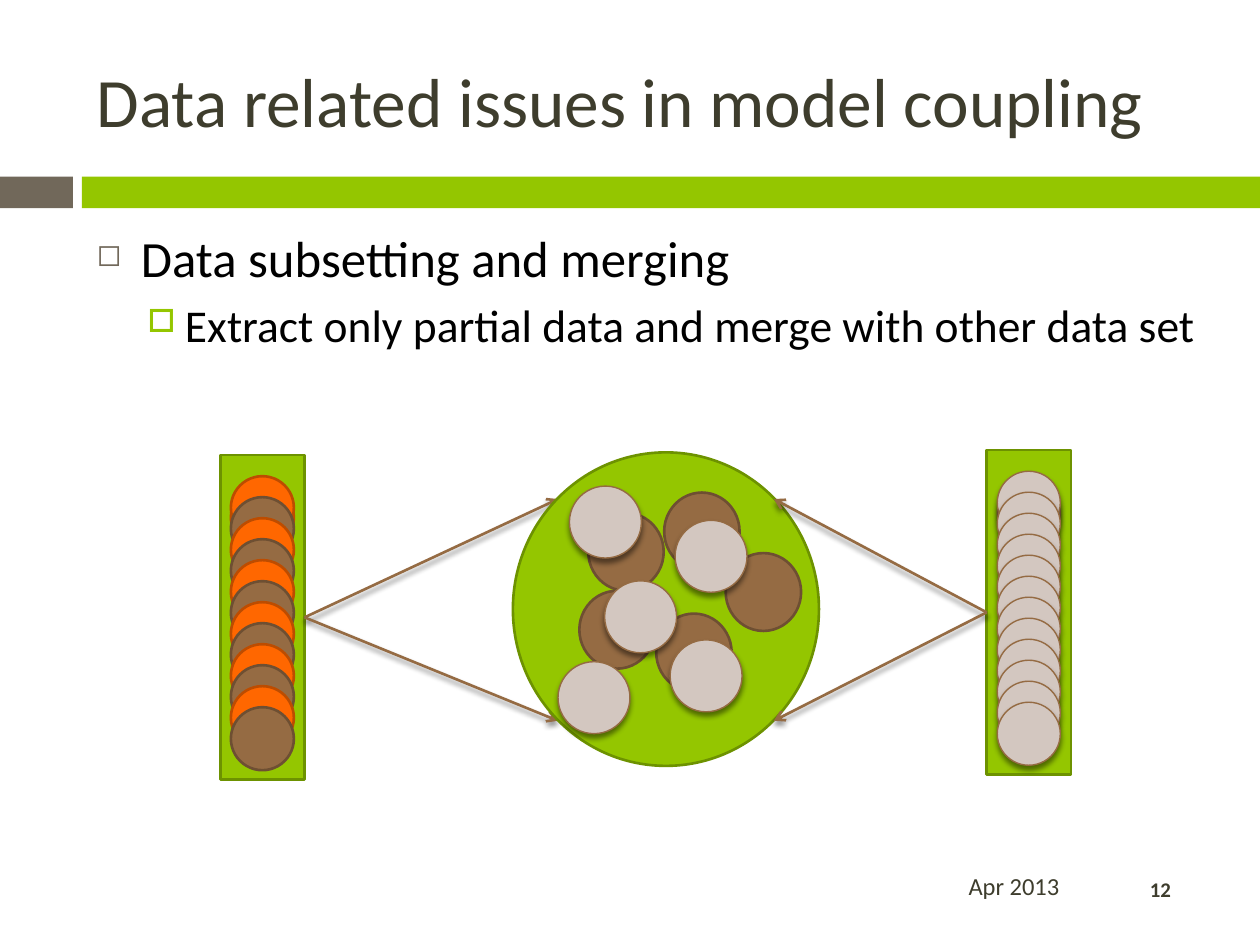
from dataclasses import dataclass
from typing import Optional

from lxml.etree import SubElement
from pptx import Presentation
from pptx.dml.color import RGBColor
from pptx.enum.shapes import MSO_CONNECTOR as Conn, MSO_SHAPE as Shape
from pptx.enum.text import MSO_ANCHOR as Anchor, PP_ALIGN as Align
from pptx.oxml.ns import qn
from pptx.util import Cm, Pt


@dataclass(frozen=True)
class Theme:
    font: str = "Calibri"
    heading: str = "3E3D2D"
    body: str = "000000"
    taupe: str = "71685A"
    green: str = "94C600"
    green_edge: str = "6D9200"
    orange: str = "FF6700"
    orange_edge: str = "BD4C00"
    brown: str = "956B43"
    brown_edge: str = "6E4F32"
    pale: str = "D3C7C0"
    shadow: str = "000000"
    title_pt: float = 39.6
    level1_pt: float = 29
    level2_pt: float = 26
    date_pt: float = 14
    number_pt: float = 11.9
    line_pt: float = 1.5
    thin_pt: float = 0.79


@dataclass(frozen=True)
class Style:
    fill: str
    edge: Optional[str] = None
    width: float = 1.5
    shadow: bool = False


@dataclass(frozen=True)
class Bullet:
    char: str
    color: str
    percent: int
    left: float
    hang: float


@dataclass(frozen=True)
class Column:
    x: float
    y: float
    styles: tuple


T = Theme()
GREEN = Style(T.green, T.green_edge, T.line_pt)
ORANGE = Style(T.orange, T.orange_edge, T.line_pt)
BROWN = Style(T.brown, T.brown_edge, T.line_pt)
PALE = Style(T.pale, T.brown, T.thin_pt, shadow=True)

COLUMN_W, COLUMN_H = 1.7, 6.55
DISC, DISC_COUNT = 1.27, 12
SOURCE = Column(4.44, 9.17, (ORANGE, BROWN))
OTHER = Column(19.89, 9.07, (PALE, PALE))
BROWN_SPOTS = ((13.23, 12.37), (14.63, 11.15), (13.39, 9.93), (11.86, 10.34), (11.68, 11.91))
PALE_SPOTS = ((13.61, 10.49), (11.48, 9.8), (13.51, 12.9), (12.19, 11.71), (11.25, 13.34))
ARROW_ENDS_Y = (10.06, 14.53)


def add_effects(spPr, shadow: bool) -> None:
    """Give a shape or connector a soft shadow below it, or none."""
    effects = SubElement(spPr, qn("a:effectLst"))
    if shadow:
        outer = SubElement(effects, qn("a:outerShdw"), blurRad=str(Pt(3)), dist=str(Pt(2.4)),
                           dir="5400000", rotWithShape="0")
        color = SubElement(outer, qn("a:srgbClr"), val=T.shadow)
        SubElement(color, qn("a:alpha"), val="45000")


def add_shape(shapes, kind: Shape, x: float, y: float, w: float, h: float, style: Style) -> None:
    """Draw a filled preset shape, measured in centimetres."""
    sp = shapes.add_shape(kind, Cm(x), Cm(y), Cm(w), Cm(h))
    sp.fill.solid()
    sp.fill.fore_color.rgb = RGBColor.from_string(style.fill)
    if style.edge:
        sp.line.color.rgb = RGBColor.from_string(style.edge)
        sp.line.width = Pt(style.width)
    else:
        sp.line.fill.background()
    add_effects(sp._element.spPr, style.shadow)


def add_arrow(shapes, x1: float, y1: float, x2: float, y2: float) -> None:
    """Draw a shadowed line with an open arrowhead at its end."""
    cxn = shapes.add_connector(Conn.STRAIGHT, Cm(x1), Cm(y1), Cm(x2), Cm(y2))
    cxn.line.color.rgb = RGBColor.from_string(T.brown)
    cxn.line.width = Pt(T.line_pt)
    SubElement(cxn.line._get_or_add_ln(), qn("a:tailEnd"), type="arrow")
    add_effects(cxn._element.spPr, shadow=True)


def add_frame(shapes, x: float, y: float, w: float, h: float, anchor: Anchor = Anchor.MIDDLE):
    """Add a wrapping text box and return its text frame."""
    tf = shapes.add_textbox(Cm(x), Cm(y), Cm(w), Cm(h)).text_frame
    tf.word_wrap = True
    tf.vertical_anchor = anchor
    return tf


def write(tf, text: str, *, size: float, color: str = T.heading, bold: bool = False,
          align: Align = Align.LEFT, before: float = 0, level: int = 0,
          bullet: Optional[Bullet] = None) -> None:
    """Write one formatted paragraph, using the empty first one if there is one."""
    p = tf.paragraphs[0] if not tf.text else tf.add_paragraph()
    p.alignment, p.level, p.space_before = align, level, Pt(before)
    r = p.add_run()
    r.text = text
    r.font.name, r.font.size, r.font.bold = T.font, Pt(size), bold
    r.font.color.rgb = RGBColor.from_string(color)
    if bullet:
        pPr = p._p.get_or_add_pPr()
        pPr.set("marL", str(Cm(bullet.left)))
        pPr.set("indent", str(-Cm(bullet.hang)))
        SubElement(SubElement(pPr, qn("a:buClr")), qn("a:srgbClr"), val=bullet.color)
        SubElement(pPr, qn("a:buSzPct"), val=str(bullet.percent * 1000))
        SubElement(pPr, qn("a:buChar"), char=bullet.char)


def add_column(shapes, column: Column) -> None:
    """Draw a data column: a bar holding a stack of overlapping discs."""
    group = shapes.add_group_shape().shapes
    add_shape(group, Shape.RECTANGLE, column.x, column.y, COLUMN_W, COLUMN_H, GREEN)
    x = column.x + (COLUMN_W - DISC) / 2
    add_shape(group, Shape.OVAL, x, column.y + 0.63, DISC, DISC, column.styles[0])
    for i in range(DISC_COUNT):
        y = column.y + 0.43 + i * DISC / 3
        add_shape(group, Shape.OVAL, x, y, DISC, DISC, column.styles[i % 2])


def add_merged_set(shapes) -> None:
    """Draw the merged data set: a large circle holding discs of both kinds."""
    group = shapes.add_group_shape().shapes
    add_shape(group, Shape.OVAL, 10.34, 9.12, 6.17, 6.32, GREEN)
    for spots, w, h, style in ((BROWN_SPOTS, 1.52, 1.57, BROWN), (PALE_SPOTS, 1.45, 1.45, PALE)):
        for x, y in spots:
            add_shape(group, Shape.OVAL, x, y, w, h, style)


def add_arrows(shapes, x: float, y: float, end_x: float) -> None:
    """Draw the two arrows from a column to the merged set."""
    for end_y in ARROW_ENDS_Y:
        add_arrow(shapes, x, y, end_x, end_y)


def main() -> None:
    """Build and save the slide."""
    prs = Presentation()
    prs.slide_width, prs.slide_height = Cm(25.4), Cm(19.05)
    s = prs.slides.add_slide(prs.slide_layouts[6]).shapes

    add_shape(s, Shape.RECTANGLE, 0, 3.56, 1.47, 0.64, Style(T.taupe))
    add_shape(s, Shape.RECTANGLE, 1.65, 3.56, 23.75, 0.64, Style(T.green))

    write(add_frame(s, 1.7, 0.64, 22.66, 2.74), "Data related issues in model coupling",
          size=T.title_pt)
    write(add_frame(s, 6.55, 17.35, 15.06, 1.02), "Apr 2013", size=T.date_pt, align=Align.RIGHT)
    write(add_frame(s, 22.66, 17.58, 1.47, 0.69), "12", size=T.number_pt, bold=True,
          align=Align.CENTER)

    body = add_frame(s, 1.7, 4.45, 22.66, 12.5, Anchor.TOP)
    write(body, "Data subsetting and merging", size=T.level1_pt, color=T.body, before=7,
          bullet=Bullet("◻", T.taupe, 60, 0.89, 0.89))
    write(body, "Extract only partial data and merge with other data set", size=T.level2_pt,
          color=T.body, before=5.5, level=1, bullet=Bullet("□", T.green, 70, 1.78, 0.76))

    add_column(s, SOURCE)
    add_arrows(s, SOURCE.x + COLUMN_W, SOURCE.y + COLUMN_H / 2, 11.25)
    add_column(s, OTHER)
    add_merged_set(s)
    add_arrows(s, OTHER.x, OTHER.y + COLUMN_H / 2, 15.6)

    prs.save("out.pptx")


if __name__ == "__main__":
    main()
